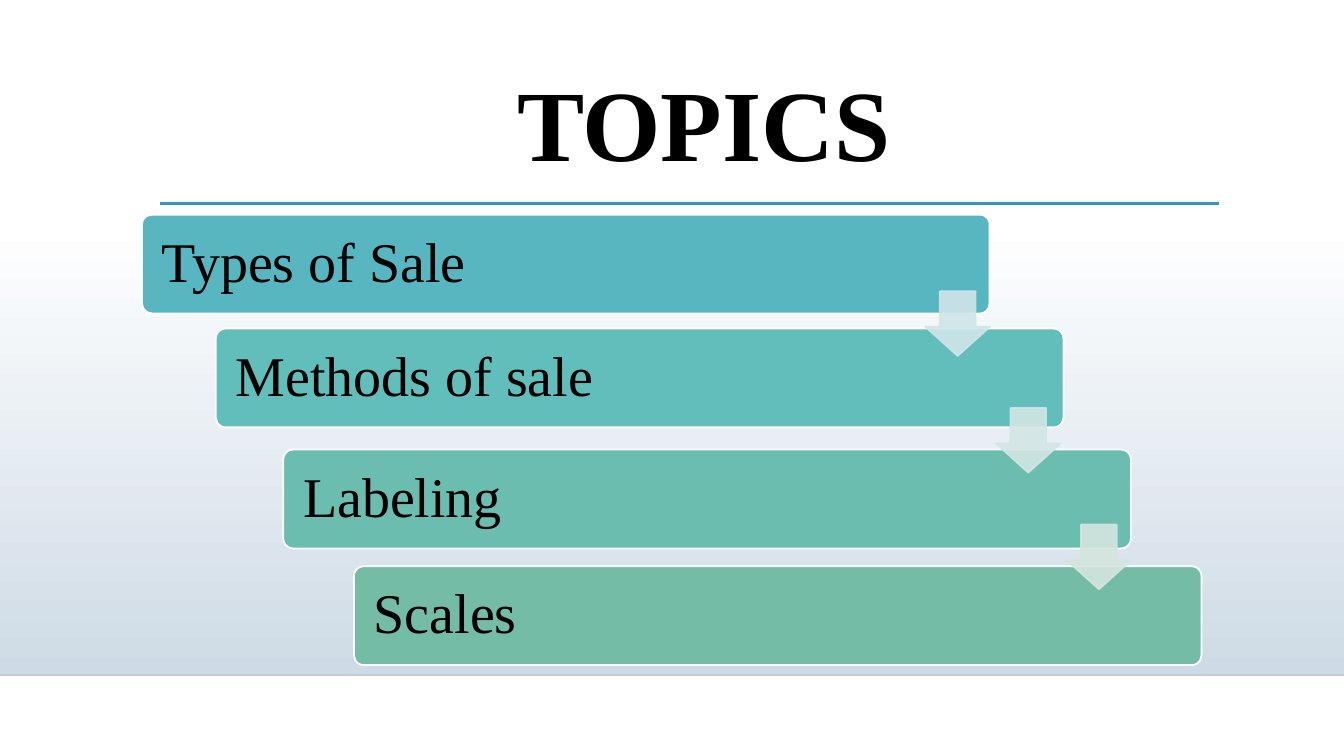
from dataclasses import dataclass

from lxml import etree
from pptx import Presentation
from pptx.dml.color import RGBColor
from pptx.enum.shapes import MSO_CONNECTOR, MSO_SHAPE
from pptx.enum.text import MSO_ANCHOR, PP_ALIGN
from pptx.oxml.ns import qn
from pptx.util import Cm, Pt

STRAIGHT = MSO_CONNECTOR.STRAIGHT
RECTANGLE = MSO_SHAPE.RECTANGLE
ROUNDED = MSO_SHAPE.ROUNDED_RECTANGLE
DOWN_ARROW = MSO_SHAPE.DOWN_ARROW
MIDDLE = MSO_ANCHOR.MIDDLE
BOTTOM = MSO_ANCHOR.BOTTOM
LEFT = PP_ALIGN.LEFT
CENTER = PP_ALIGN.CENTER

SLIDE_WIDTH, SLIDE_HEIGHT = 33.87, 19.05
FLOOR = 17.02
BAR_WIDTH, BAR_HEIGHT = 21.36, 2.49
ARROW_SIZE = 1.63
FIRST_ARROW = (23.32, 7.34)
ARROW_STEP = (1.78, 2.94)

TOPICS = [
    ("Types of Sale", 3.58, 5.41, "58B6C0"),
    ("Methods of sale", 5.44, 8.28, "61BEBA"),
    ("Labeling", 7.14, 11.33, "6BBDAF"),
    ("Scales", 8.92, 14.27, "74BCA6"),
]
ARROW_COLORS = ["D0E5E8", "D2E6E4", "D4E6DF"]


@dataclass(frozen=True)
class Theme:
    font: str = "Times New Roman"
    text: str = "000000"
    paper: str = "FFFFFF"
    haze: str = "CEDBE6"
    rule: str = "3494BA"
    edge: str = "000001"
    title_size: int = 72
    topic_size: int = 40
    outline: float = 1.25


class TopicSlide:
    def __init__(self, slide, theme):
        self.slide = slide
        self.theme = theme

    def paint(self, target, color, alpha=100):
        target.solid()
        target.fore_color.rgb = RGBColor.from_string(color)
        if alpha < 100:
            swatch = target._xPr.find(qn("a:solidFill"))[0]
            etree.SubElement(swatch, qn("a:alpha"), val=str(alpha * 1000))

    def shape(self, kind, left, top, width, height):
        shape = self.slide.shapes.add_shape(
            kind, Cm(left), Cm(top), Cm(width), Cm(height))
        shape.shadow.inherit = False
        return shape

    def haze(self, top, height):
        haze = self.shape(RECTANGLE, 0, top, SLIDE_WIDTH, height)
        haze.line.fill.background()
        haze.fill.gradient()
        haze.fill.gradient_angle = 270
        for stop, color in zip(haze.fill.gradient_stops,
                               (self.theme.paper, self.theme.haze)):
            stop.color.rgb = RGBColor.from_string(color)

    def rule(self, left, right, y, color, weight, alpha=100):
        rule = self.slide.shapes.add_connector(
            STRAIGHT, Cm(left), Cm(y), Cm(right), Cm(y))
        rule.line.width = Pt(weight)
        self.paint(rule.line.fill, color, alpha)
        etree.SubElement(rule._element.spPr, qn("a:effectLst"))

    def label(self, frame, wording, size, align, anchor, bold=False):
        frame.word_wrap = True
        frame.vertical_anchor = anchor
        paragraph = frame.paragraphs[0]
        paragraph.alignment = align
        paragraph.line_spacing = 0.9
        run = paragraph.add_run()
        run.text = wording
        run.font.name = self.theme.font
        run.font.size = Pt(size)
        run.font.bold = bold
        run.font.color.rgb = RGBColor.from_string(self.theme.text)

    def title(self, wording, left, top, width, height):
        title = self.slide.shapes.add_textbox(
            Cm(left), Cm(top), Cm(width), Cm(height))
        self.label(title.text_frame, wording, self.theme.title_size,
                   CENTER, BOTTOM, bold=True)

    def bar(self, wording, left, top, color):
        bar = self.shape(ROUNDED, left, top, BAR_WIDTH, BAR_HEIGHT)
        bar.adjustments[0] = 0.1
        self.paint(bar.fill, color)
        self.paint(bar.line.fill, self.theme.paper)
        bar.line.width = Pt(self.theme.outline)
        frame = bar.text_frame
        frame.margin_left = frame.margin_right = Cm(0.43)
        frame.margin_top = frame.margin_bottom = Cm(0.43)
        self.label(frame, wording, self.theme.topic_size, LEFT, MIDDLE)

    def arrow(self, left, top, color):
        arrow = self.shape(DOWN_ARROW, left, top, ARROW_SIZE, ARROW_SIZE)
        arrow.adjustments[0] = 0.55
        arrow.adjustments[1] = 0.45
        self.paint(arrow.fill, color, 90)
        self.paint(arrow.line.fill, color, 90)
        arrow.line.width = Pt(self.theme.outline)


def main():
    deck = Presentation()
    deck.slide_width, deck.slide_height = Cm(SLIDE_WIDTH), Cm(SLIDE_HEIGHT)
    theme = Theme()
    page = TopicSlide(deck.slides.add_slide(deck.slide_layouts[6]), theme)

    page.haze(5.61, FLOOR - 5.61)
    page.rule(0, SLIDE_WIDTH, FLOOR, theme.edge, 1, alpha=20)
    page.rule(4.04, 30.73, 5.13, theme.rule, 2.5)
    page.title("TOPICS", 3.58, 1.7, 28.32, 3.05)

    for wording, left, top, color in TOPICS:
        page.bar(wording, left, top, color)
    for step, color in enumerate(ARROW_COLORS):
        left, top = (start + step * gap
                     for start, gap in zip(FIRST_ARROW, ARROW_STEP))
        page.arrow(left, top, color)

    deck.save("out.pptx")


if __name__ == "__main__":
    main()
